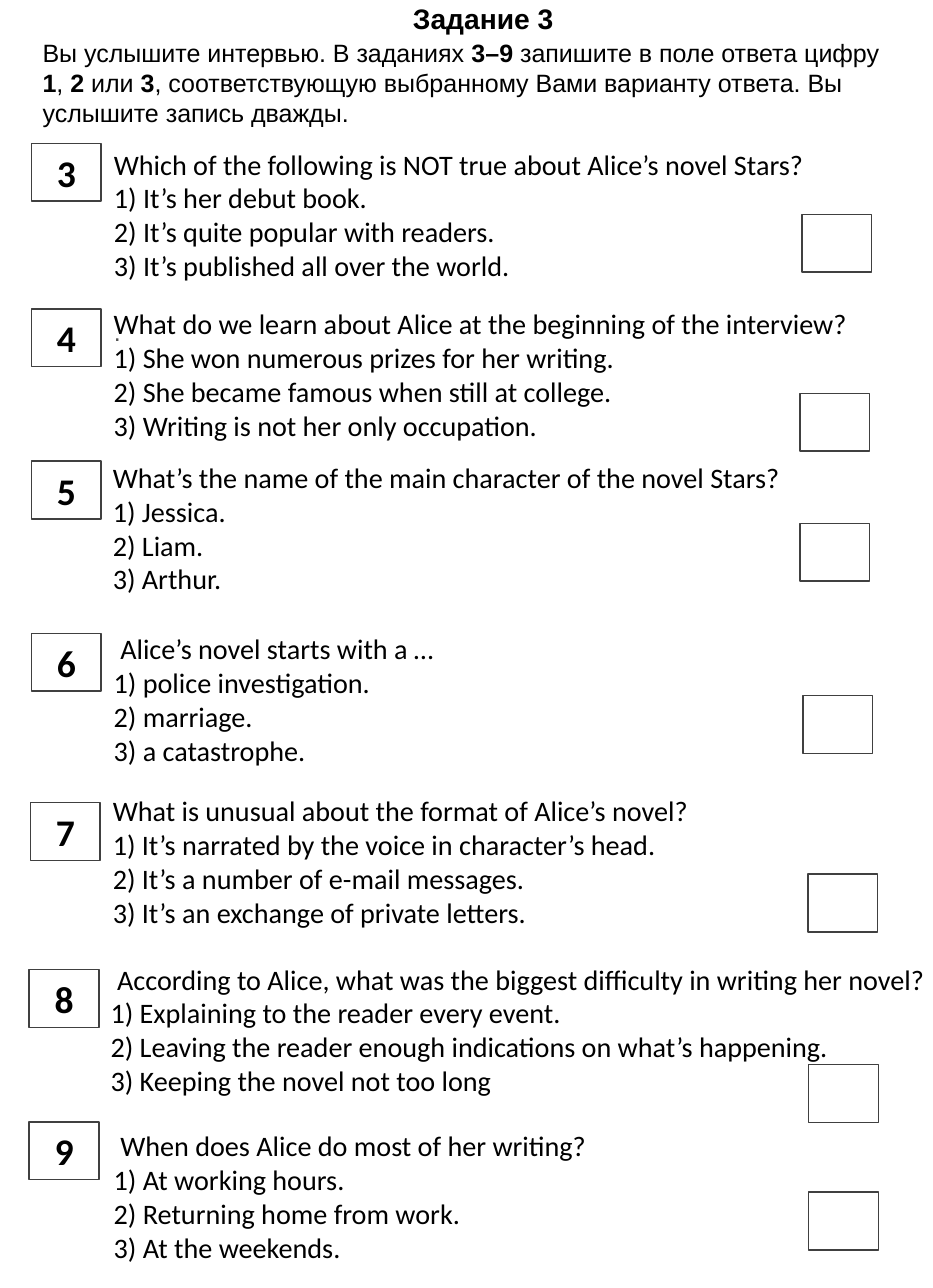
from dataclasses import dataclass

from pptx import Presentation
from pptx.dml.color import RGBColor
from pptx.enum.shapes import MSO_SHAPE as Shape
from pptx.enum.text import MSO_ANCHOR as Anchor, MSO_AUTO_SIZE as AutoSize, PP_ALIGN as Align
from pptx.oxml.xmlchemy import OxmlElement
from pptx.util import Cm, Pt

COLORS = {"text": "000000", "dot": "555555", "fill": "FFFFFF", "line": "404040"}
BOX_W, BOX_H = 1.57, 1.3
LIST_H = 3.33


@dataclass
class Question:
    number: int
    number_at: tuple[float, float]
    text_at: tuple[float, float]
    width: float
    answer_at: tuple[float, float]
    prompt: str
    options: tuple[str, str, str]
    indent: float = 0


INTRO = (
    "Вы услышите интервью. В заданиях ", "3–9",
    " запишите в поле ответа цифру ", "1", ", ", "2", " или ", "3",
    ", соответствующую выбранному Вами варианту ответа. Вы услышите запись дважды.",
)

QUESTIONS = [
    Question(3, (0.71, 3.23), (2.31, 3.18), 19.15, (18.06, 4.83),
             "Which of the following is NOT true about Alice’s novel Stars?",
             ("It’s her debut book.", "It’s quite popular with readers.",
              "It’s published all over the world.")),
    Question(4, (0.71, 6.96), (2.31, 6.78), 18.19, (18.01, 8.86),
             "What do we learn about Alice at the beginning of the interview?",
             ("She won numerous prizes for her writing.",
              "She became famous when still at college.",
              "Writing is not her only occupation.")),
    Question(5, (0.71, 10.39), (2.29, 10.24), 20.29, (18.01, 11.79),
             "What’s the name of the main character of the novel Stars?",
             ("Jessica.", "Liam.", "Arthur.")),
    Question(6, (0.71, 14.27), (2.31, 14.1), 18.19, (18.08, 15.67),
             "Alice’s novel starts with a …",
             ("police investigation.", "marriage.", "a catastrophe."), 0.15),
    Question(7, (0.69, 18.08), (2.29, 17.75), 18.19, (18.19, 19.69),
             "What is unusual about the format of Alice’s novel?",
             ("It’s narrated by the voice in character’s head.",
              "It’s a number of e-mail messages.",
              "It’s an exchange of private letters.")),
    Question(8, (0.66, 21.84), (2.24, 21.54), 19.74, (18.21, 23.98),
             "According to Alice, what was the biggest difficulty in writing her novel?",
             ("Explaining to the reader every event.",
              "Leaving the reader enough indications on what’s happening.",
              "Keeping the novel not too long"), 0.15),
    Question(9, (0.66, 25.27), (2.31, 25.3), 19.15, (18.21, 26.85),
             "When does Alice do most of her writing?",
             ("At working hours.", "Returning home from work.", "At the weekends."), 0.15),
]


def add_run(p, text: str, size: float, font: str = "Calibri",
            bold: bool = False, color: str = "text") -> None:
    r = p.add_run()
    r.text = text
    r.font.size = Pt(size)
    r.font.name = font
    r.font.bold = bold
    r.font.color.rgb = RGBColor.from_string(COLORS[color])


def place(sp, left: float, top: float, width: float, height: float):
    sp.left, sp.top, sp.width, sp.height = Cm(left), Cm(top), Cm(width), Cm(height)
    tf = sp.text_frame
    tf.word_wrap = True
    tf.auto_size = AutoSize.SHAPE_TO_FIT_TEXT
    tf.vertical_anchor = Anchor.TOP
    return tf


def add_paragraph(tf, first: bool, indent: float = 0):
    p = tf.paragraphs[0] if first else tf.add_paragraph()
    p.space_before = Pt(0)
    p.alignment = Align.LEFT
    pPr = p._p.get_or_add_pPr()
    pPr.set("marL", "0")
    pPr.set("indent", str(int(Cm(indent))))
    pPr.append(OxmlElement("a:buNone"))
    return p


def add_box(s, at: tuple[float, float], label: str = "") -> None:
    sp = s.shapes.add_shape(Shape.RECTANGLE, Cm(at[0]), Cm(at[1]), Cm(BOX_W), Cm(BOX_H))
    sp.shadow.inherit = False
    sp.fill.solid()
    sp.fill.fore_color.rgb = RGBColor.from_string(COLORS["fill"])
    sp.line.color.rgb = RGBColor.from_string(COLORS["line"])
    sp.line.width = Pt(1)
    if label:
        sp.text_frame.vertical_anchor = Anchor.MIDDLE
        p = sp.text_frame.paragraphs[0]
        p.alignment = Align.CENTER
        add_run(p, label, 24, bold=True)


def add_question(s, sp, q: Question) -> None:
    tf = place(sp, *q.text_at, q.width, LIST_H)
    add_run(add_paragraph(tf, True, q.indent), q.prompt, 18)
    for i, option in enumerate(q.options, 1):
        add_run(add_paragraph(tf, False), f"{i}) {option}", 18)
    add_box(s, q.number_at, str(q.number))
    add_box(s, q.answer_at)


def main() -> None:
    prs = Presentation()
    prs.slide_width, prs.slide_height = Cm(21.01), Cm(29.01)
    s = prs.slides.add_slide(prs.slide_layouts[1])

    tf = place(s.shapes.title, 5.23, -0.1, 11.3, 1.02)
    p = tf.paragraphs[0]
    p.alignment = Align.CENTER
    add_run(p, "Задание 3", 18, "Arial", True)

    tf = place(s.shapes.add_textbox(0, 0, 0, 0), 0.71, 0.71, 19.79, 2.31)
    p = add_paragraph(tf, True)
    for i, text in enumerate(INTRO):
        add_run(p, text, 16, "Arial", bold=i % 2 == 1)

    body = s.placeholders[1]
    for i, q in enumerate(QUESTIONS):
        add_question(s, s.shapes.add_textbox(0, 0, 0, 0) if i else body, q)

    p = add_paragraph(body.text_frame, False)
    p.space_before = Pt(22)
    add_run(p, ".", 16, "Arial", color="dot")
    body.height = Cm(5.46)

    prs.save("out.pptx")


if __name__ == "__main__":
    main()
